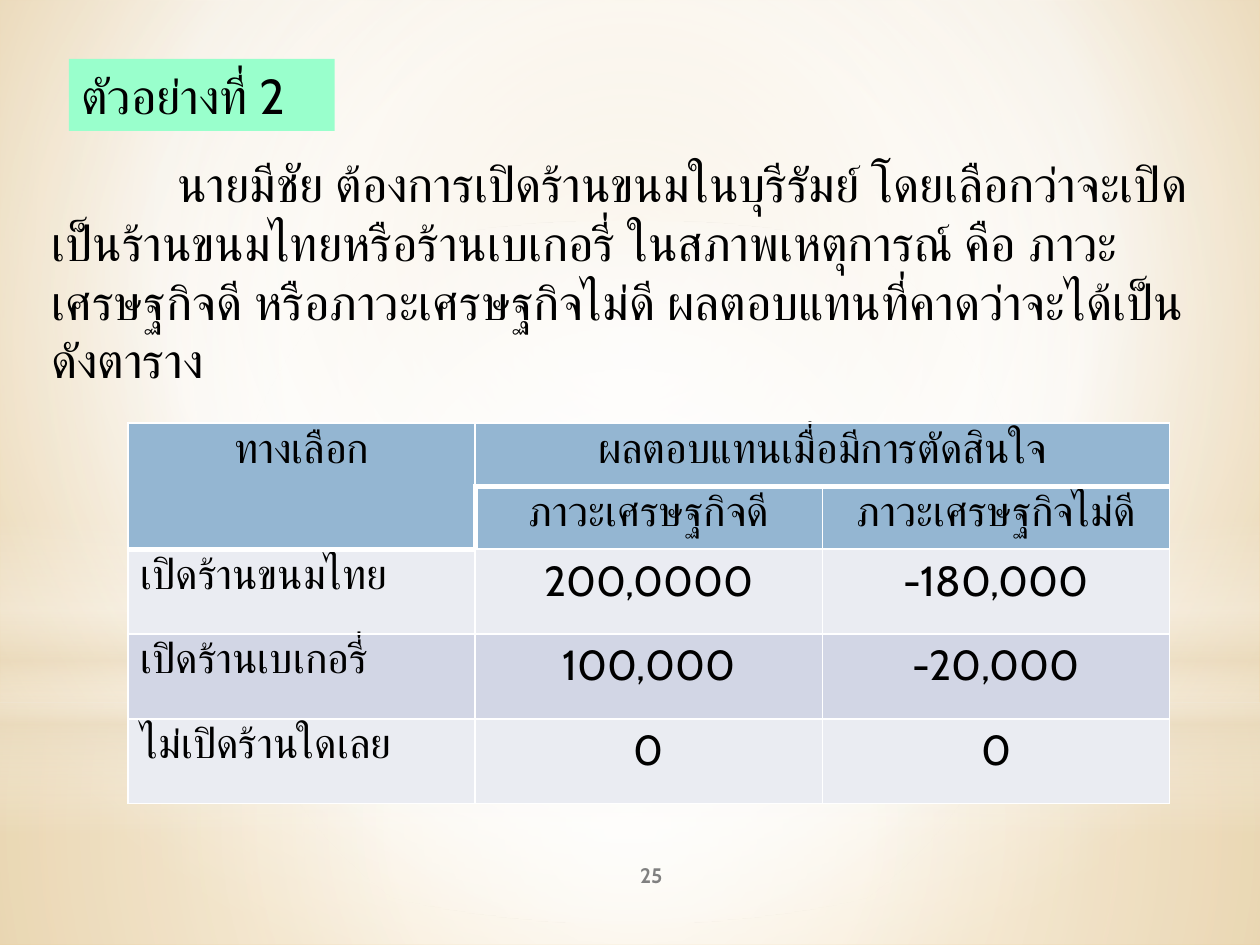
from dataclasses import dataclass

from lxml import etree
from pptx import Presentation
from pptx.dml.color import RGBColor
from pptx.enum.shapes import MSO_SHAPE
from pptx.enum.text import MSO_ANCHOR, PP_ALIGN
from pptx.oxml.ns import qn
from pptx.util import Cm, Pt

RECT, OVAL = MSO_SHAPE.RECTANGLE, MSO_SHAPE.OVAL
LEFT, MID = PP_ALIGN.LEFT, PP_ALIGN.CENTER
TOP, CENTER = MSO_ANCHOR.TOP, MSO_ANCHOR.MIDDLE


@dataclass(frozen=True)
class Theme:
    font: str = "Cabin"
    ink: str = "000000"
    gray: str = "808080"
    white: str = "FFFFFF"
    sand: str = "EBDDC3"
    tan: str = "ECD7B0"
    gold: str = "E6BE74"
    mint: str = "99FFCC"
    head: str = "94B6D2"
    light: str = "EAECF2"
    dark: str = "D2D6E5"
    body: int = 28
    cell: int = 24
    note: int = 12


theme = Theme()


def shade(fill, root, stops, rect=None):
    fill.gradient()
    grad = root.find(".//" + qn("a:gradFill"))
    grad.clear()
    grad.set("rotWithShape", "1")
    group = etree.SubElement(grad, qn("a:gsLst"))
    for pos, color, alpha in stops:
        stop = etree.SubElement(group, qn("a:gs"), pos=str(pos * 1000))
        tint = etree.SubElement(stop, qn("a:srgbClr"), val=color)
        if alpha < 100:
            etree.SubElement(tint, qn("a:alpha"), val=str(alpha * 1000))
    if rect:
        way = etree.SubElement(grad, qn("a:path"), path="circle")
        sides = {side: str(part * 1000) for side, part in zip("ltrb", rect)}
        etree.SubElement(way, qn("a:fillToRect"), **sides)
    else:
        etree.SubElement(grad, qn("a:lin"), ang="5400000", scaled="0")


def write(frame, text, size, align=LEFT, color=theme.ink, bold=False):
    frame.text = text
    frame.word_wrap = True
    line = frame.paragraphs[0]
    line.alignment = align
    font = line.runs[0].font
    font.name, font.size, font.bold = theme.font, Pt(size), bold
    font.color.rgb = RGBColor.from_string(color)


deck = Presentation()
deck.slide_width, deck.slide_height = Cm(25.4), Cm(19.05)
slide = deck.slides.add_slide(deck.slide_layouts[6])
shapes = slide.shapes

shade(slide.background.fill, slide.element,
      [(0, theme.tan, 100), (60, theme.white, 100), (100, theme.gold, 100)],
      (20, 10, 20, 60))

core = (50, 50, 50, 50)
layers = [
    (RECT, 14.17, 4.88, core,
     [(0, theme.white, 91), (37, theme.white, 76), (100, theme.sand, 79)]),
    (RECT, 0, 14.17, core,
     [(0, theme.white, 89), (48, theme.white, 62), (100, theme.sand, 79)]),
    (RECT, 10.46, 6.35, None,
     [(0, theme.white, 0), (29, theme.white, 30), (45, theme.sand, 40),
      (55, theme.white, 26), (65, theme.sand, 60), (100, theme.white, 0)]),
    (OVAL, 4.45, 14.17, core,
     [(0, theme.white, 100), (56, theme.white, 0)]),
]
for kind, top, height, rect, stops in layers:
    layer = shapes.add_shape(kind, 0, Cm(top), deck.slide_width, Cm(height))
    layer.shadow.inherit = False
    layer.line.fill.background()
    shade(layer.fill, layer.element, stops, rect)

page = shapes.add_textbox(Cm(10.59), Cm(17.13), Cm(5.08), Cm(1.02))
write(page.text_frame, "25", theme.note, MID, theme.gray, True)
page.text_frame.vertical_anchor = CENTER

story = shapes.add_textbox(Cm(0.79), Cm(2.97), Cm(24), Cm(5.05))
write(story.text_frame,
      "นายมีชัย ต้องการเปิดร้านขนมในบุรีรัมย์ โดยเลือกว่าจะเปิดเป็นร้านขนมไทย"
      "หรือร้านเบเกอรี่ ในสภาพเหตุการณ์ คือ ภาวะเศรษฐกิจดี หรือภาวะเศรษฐกิจไม่ดี "
      "ผลตอบแทนที่คาดว่าจะได้เป็น ดังตาราง", theme.body)
props = story.text_frame.paragraphs[0]._p.get_or_add_pPr()
props.set("marL", "0")
props.set("indent", str(Cm(2.54)))

title = shapes.add_shape(RECT, Cm(1.39), Cm(1.19), Cm(5.36), Cm(1.45))
title.shadow.inherit = False
title.fill.solid()
title.fill.fore_color.rgb = RGBColor.from_string(theme.mint)
title.line.fill.background()
write(title.text_frame, "ตัวอย่างที่ 2", theme.body)
title.text_frame.vertical_anchor = TOP

rows = [
    ("ทางเลือก", "ผลตอบแทนเมื่อมีการตัดสินใจ", ""),
    ("", "ภาวะเศรษฐกิจดี", "ภาวะเศรษฐกิจไม่ดี"),
    ("เปิดร้านขนมไทย", "200,0000", "-180,000"),
    ("เปิดร้านเบเกอรี่", "100,000", "-20,000"),
    ("ไม่เปิดร้านใดเลย", "0", "0"),
]
fills = [theme.head, theme.head, theme.light, theme.dark, theme.light]
highs = [1.27, 1.27, 1.71, 1.71, 1.71]
thick = {
    "L": {(1, 1)},
    "R": {(1, 0)},
    "T": {(1, 1), (1, 2), (2, 0)},
    "B": {(0, 0), (0, 1), (0, 2), (1, 0)},
}
grid = shapes.add_table(5, 3, Cm(2.58), Cm(8.53), Cm(21), Cm(sum(highs))).table
for col in grid.columns:
    col.width = Cm(7)
for r, texts in enumerate(rows):
    grid.rows[r].height = Cm(highs[r])
    for c, text in enumerate(texts):
        cell = grid.cell(r, c)
        if text:
            align = LEFT if r > 1 and c == 0 else MID
            write(cell.text_frame, text, theme.cell, align)
        props = cell._tc.get_or_add_tcPr()
        for side, spots in thick.items():
            width = Pt(3 if (r, c) in spots else 1)
            edge = etree.SubElement(props, qn("a:ln" + side), w=str(width))
            paint = etree.SubElement(edge, qn("a:solidFill"))
            etree.SubElement(paint, qn("a:srgbClr"), val=theme.white)
        cell.fill.solid()
        cell.fill.fore_color.rgb = RGBColor.from_string(fills[r])
grid.cell(0, 0).merge(grid.cell(1, 0))
grid.cell(0, 1).merge(grid.cell(0, 2))

deck.save("out.pptx")
